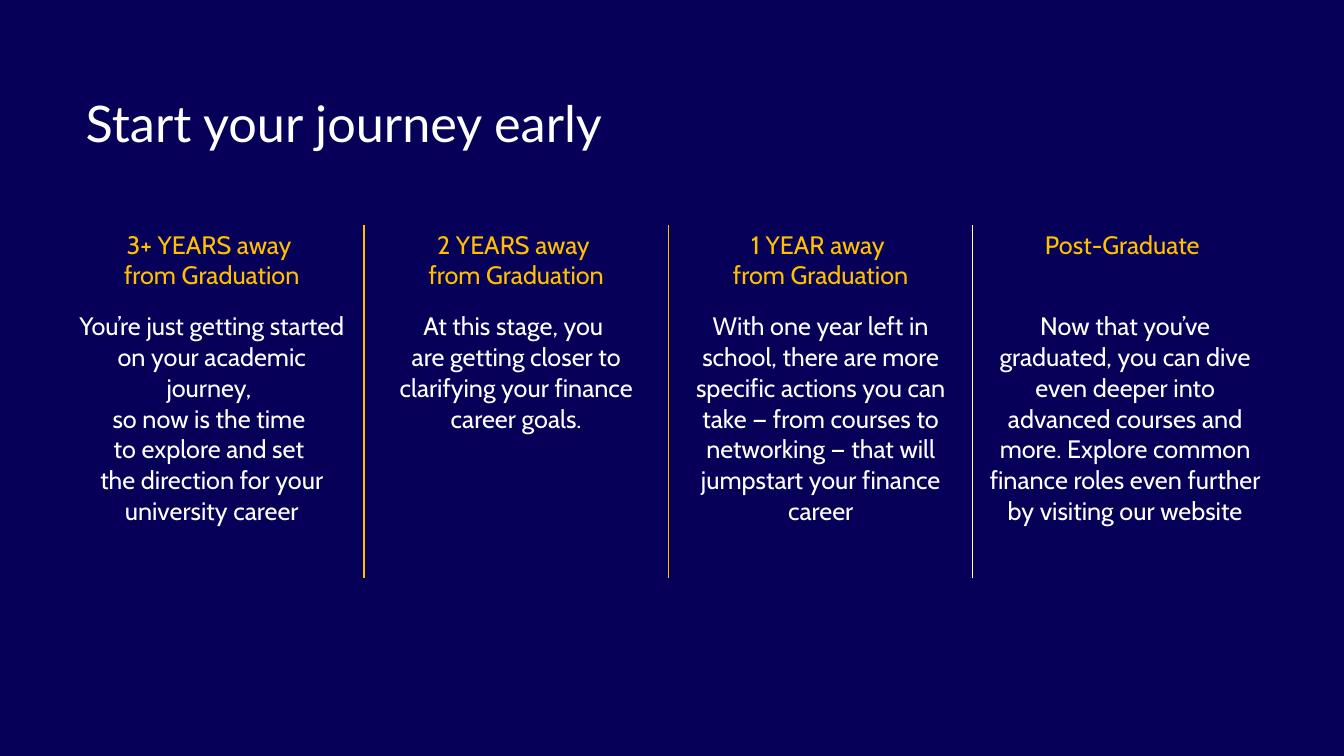
from lxml import etree
from pptx import Presentation
from pptx.dml.color import RGBColor
from pptx.enum.text import MSO_ANCHOR, PP_ALIGN
from pptx.oxml.ns import qn
from pptx.util import Inches, Pt

LEFT, CENTER = PP_ALIGN.LEFT, PP_ALIGN.CENTER
TOP, MIDDLE = MSO_ANCHOR.TOP, MSO_ANCHOR.MIDDLE
NAVY, GOLD, WHITE = "060059", "FFC000", "FFFFFF"
PLAIN = "{2D5ABB26-0587-4C30-8999-92F81FD0307C}"  # no style, no grid

STAGES = [
    ("3+ YEARS away \nfrom Graduation",
     "You’re just getting started on your academic journey, \nso now is the time \n"
     "to explore and set \nthe direction for your university career"),
    ("2 YEARS away \nfrom Graduation",
     "At this stage, you \nare getting closer to clarifying your finance career goals."),
    ("1 YEAR away \nfrom Graduation",
     "With one year left in school, there are more specific actions you can take — "
     "from courses to networking — that will jumpstart your finance career"),
    ("Post-Graduate ",
     "Now that you’ve graduated, you can dive even deeper into advanced courses and "
     "more. Explore common finance roles even further by visiting our website"),
]
RULES = [GOLD, GOLD, WHITE]  # dividers between the stages
HEAD = dict(name="Cabin", size=18, color=GOLD, pad=0.05)
BODY = dict(HEAD, color=WHITE, pad=0.15)


def rgb(code):
    return RGBColor.from_string(code)


def write(para, text, align, name, size, color):
    para.text = text
    para.alignment = align
    for key, value in dict(name=name, size=Pt(size), bold=False).items():
        setattr(para.font, key, value)
    para.font.color.rgb = rgb(color)


def add_title(slide, text, left, top, width, height):
    title = slide.shapes.title
    box = dict(left=left, top=top, width=width, height=height)
    for key, value in box.items():
        setattr(title, key, Inches(value))
    frame = title.text_frame
    frame.word_wrap = True
    frame.vertical_anchor = MIDDLE
    write(frame.paragraphs[0], text, LEFT, "Lato", 36, WHITE)


def add_rule(cell, side, color):
    """Draw one side border; call for the left side before the right."""
    line = etree.SubElement(cell._tc.get_or_add_tcPr(), qn("a:ln" + side), w=str(Pt(1)))
    fill = etree.SubElement(line, qn("a:solidFill"))
    etree.SubElement(fill, qn("a:srgbClr"), val=color)


def fill_cell(cell, text, name, size, color, pad):
    cell.fill.background()
    cell.vertical_anchor = TOP
    sides = dict(margin_top=pad, margin_bottom=pad,
                 margin_left=max(pad, 0.1), margin_right=max(pad, 0.1))
    for key, value in sides.items():
        setattr(cell, key, Inches(value))
    write(cell.text_frame.paragraphs[0], text, CENTER, name, size, color)


def add_stages(slide, left, top, width, height, head):
    """Place the stage table; head is the height of its first row."""
    table = slide.shapes.add_table(2, len(STAGES), Inches(left), Inches(top),
                                   Inches(width), Inches(height)).table
    table._tbl.tblPr.find(qn("a:tableStyleId")).text = PLAIN
    table.first_row = table.horz_banding = False
    table.rows[0].height = Inches(head)
    table.rows[1].height = Inches(height - head)
    for col, stage in enumerate(STAGES):
        for row, (text, style) in enumerate(zip(stage, (HEAD, BODY))):
            cell = table.cell(row, col)
            if col > 0:
                add_rule(cell, "L", RULES[col - 1])
            if col < len(RULES):
                add_rule(cell, "R", RULES[col])
            fill_cell(cell, text, **style)


def main():
    deck = Presentation()
    deck.slide_width, deck.slide_height = Inches(13.33), Inches(7.5)
    slide = deck.slides.add_slide(deck.slide_layouts[5])
    back = slide.background.fill
    back.solid()
    back.fore_color.rgb = rgb(NAVY)
    add_title(slide, "Start your journey early", 0.75, 0.86, 9, 0.71)
    add_stages(slide, 0.59, 2.23, 12.08, 3.45, 0.66)
    deck.save("out.pptx")


if __name__ == "__main__":
    main()
